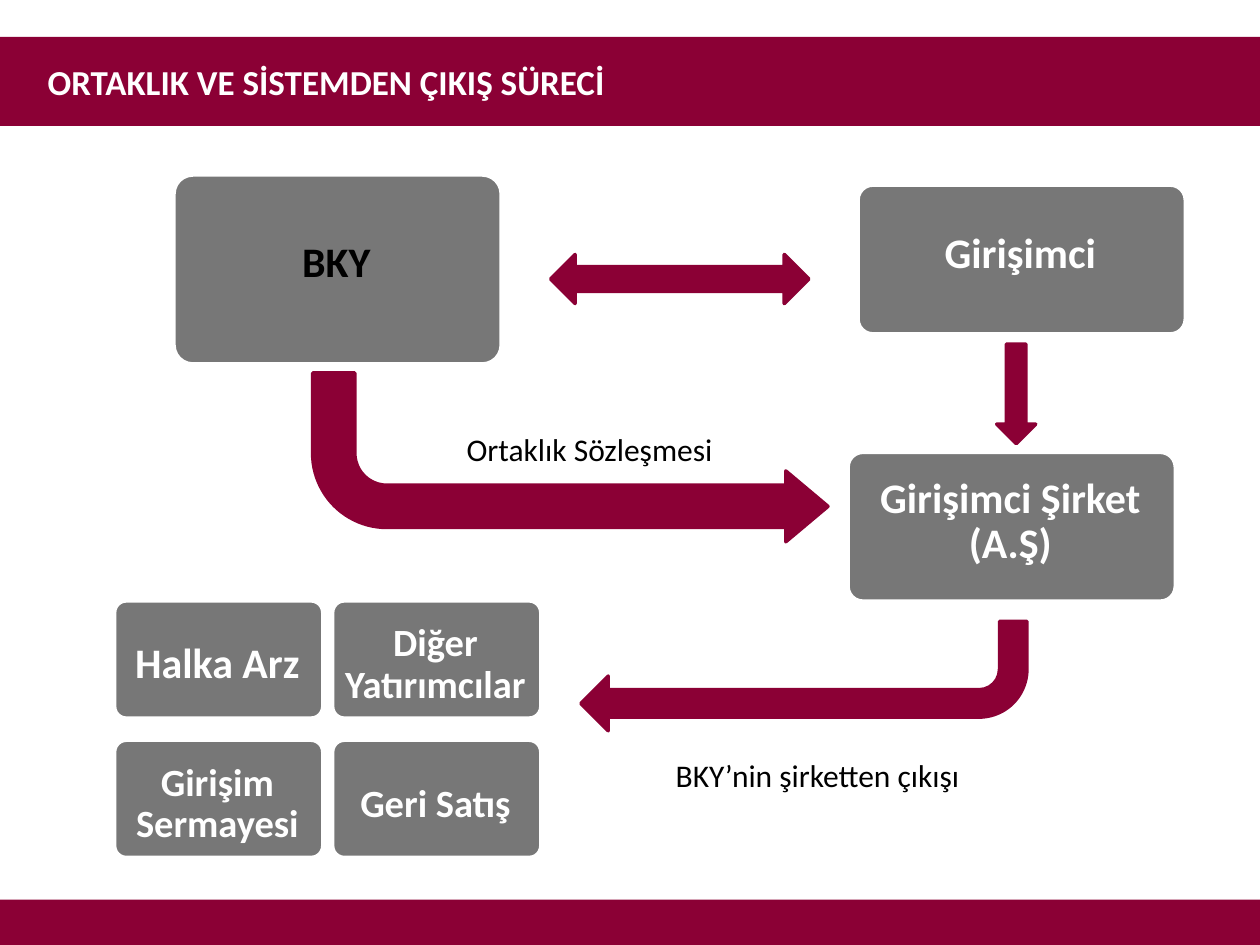
"""Build the slide on the partnership and exit process."""
from pptx import Presentation
from pptx.dml.color import RGBColor
from pptx.enum.shapes import MSO_SHAPE as Kind
from pptx.enum.text import MSO_ANCHOR as Anchor, MSO_AUTO_SIZE as Fit, PP_ALIGN as Align
from pptx.util import Pt

WINE = RGBColor(0x8B, 0x00, 0x35)
GREY = RGBColor(0x77, 0x77, 0x77)
WHITE = RGBColor(0xFF, 0xFF, 0xFF)
BLACK = RGBColor(0x00, 0x00, 0x00)


def draw(kind, place, fill, line=None):
    shape = slide.shapes.add_shape(kind, *map(Pt, place))
    shape.shadow.inherit = False
    shape.fill.solid()
    shape.fill.fore_color.rgb = fill
    if line is None:
        shape.line.fill.background()
    else:
        shape.line.color.rgb = line
        shape.line.width = Pt(2)
    return shape


def write(frame, text, size, color, bold, align):
    frame.word_wrap = True
    par = frame.paragraphs[0]
    par.alignment = align
    run = par.add_run()
    run.text = text
    font = run.font
    font.name, font.size, font.bold = "Calibri", Pt(size), bold
    font.color.rgb = color
    return par


deck = Presentation()
deck.slide_width, deck.slide_height = Pt(720), Pt(540)
slide = deck.slides.add_slide(deck.slide_layouts[5])

draw(Kind.RECTANGLE, (0, 21, 720, 51), WINE)
draw(Kind.RECTANGLE, (0, 514, 720, 26), WINE)

title = slide.shapes.title
slide.shapes._spTree.append(title._element)
title.left, title.top, title.width, title.height = map(Pt, (20, 31, 578, 32))
title.text_frame.auto_size = Fit.NONE
title.text_frame.vertical_anchor = Anchor.TOP
write(title.text_frame, "ORTAKLIK VE SİSTEMDEN ÇIKIŞ SÜRECİ", 20, WHITE, True, Align.LEFT)

boxes = [
    ("BKY", (99.4, 100, 187, 108), 24, BLACK, 5, 11.5),
    ("Girişimci", (490.3, 105.8, 187, 85), 24, WHITE, 5, 10),
    ("Girişimci Şirket (A.Ş)", (484.6, 258.5, 187, 85), 24, WHITE, 5, 10),
]
exits = [("Halka Arz", 24), ("Diğer Yatırımcılar", 22), ("Girişim Sermayesi", 22), ("Geri Satış", 22)]
for i, (name, size) in enumerate(exits):
    row, col = divmod(i, 2)
    place = (65.5 + 124.6 * col, 343.4 + 79.6 * row, 119, 67)
    boxes.append((name, place, size, WHITE, 10, 3.5))

for name, place, size, color, top, base in boxes:
    box = draw(Kind.ROUNDED_RECTANGLE, place, GREY, WHITE)
    box.adjustments[0] = 0.1
    frame = box.text_frame
    frame.vertical_anchor = Anchor.MIDDLE
    frame.margin_left, frame.margin_right = Pt(5), Pt(6.5)
    frame.margin_top, frame.margin_bottom = Pt(top), Pt(base)
    write(frame, name, size, color, True, Align.CENTER).line_spacing = 0.9

draw(Kind.LEFT_RIGHT_ARROW, (314.6, 145.4, 147.6, 28.1), WINE, WINE)
draw(Kind.DOWN_ARROW, (569.5, 196.6, 22.3, 56.9), WINE, WINE)
leave = draw(Kind.BENT_ARROW, (331.9, 355, 254.9, 62.6), WINE, WINE)
leave.rotation = 180
join = draw(Kind.BENT_ARROW, (178.6, 213.1, 294.5, 96.5), WINE, WINE)
join.rotation = 180
join._element.spPr.xfrm.set("flipH", "1")
for i, value in enumerate((0.25, 0.21, 0.25, 0.44)):
    join.adjustments[i] = value

for text, left, top in [("Ortaklık Sözleşmesi", 223.9, 241.9), ("BKY’nin şirketten çıkışı", 354.2, 428.4)]:
    label = slide.shapes.add_textbox(Pt(left), Pt(top), Pt(226), Pt(29))
    write(label.text_frame, text, 18, BLACK, False, Align.CENTER)

deck.save("out.pptx")
